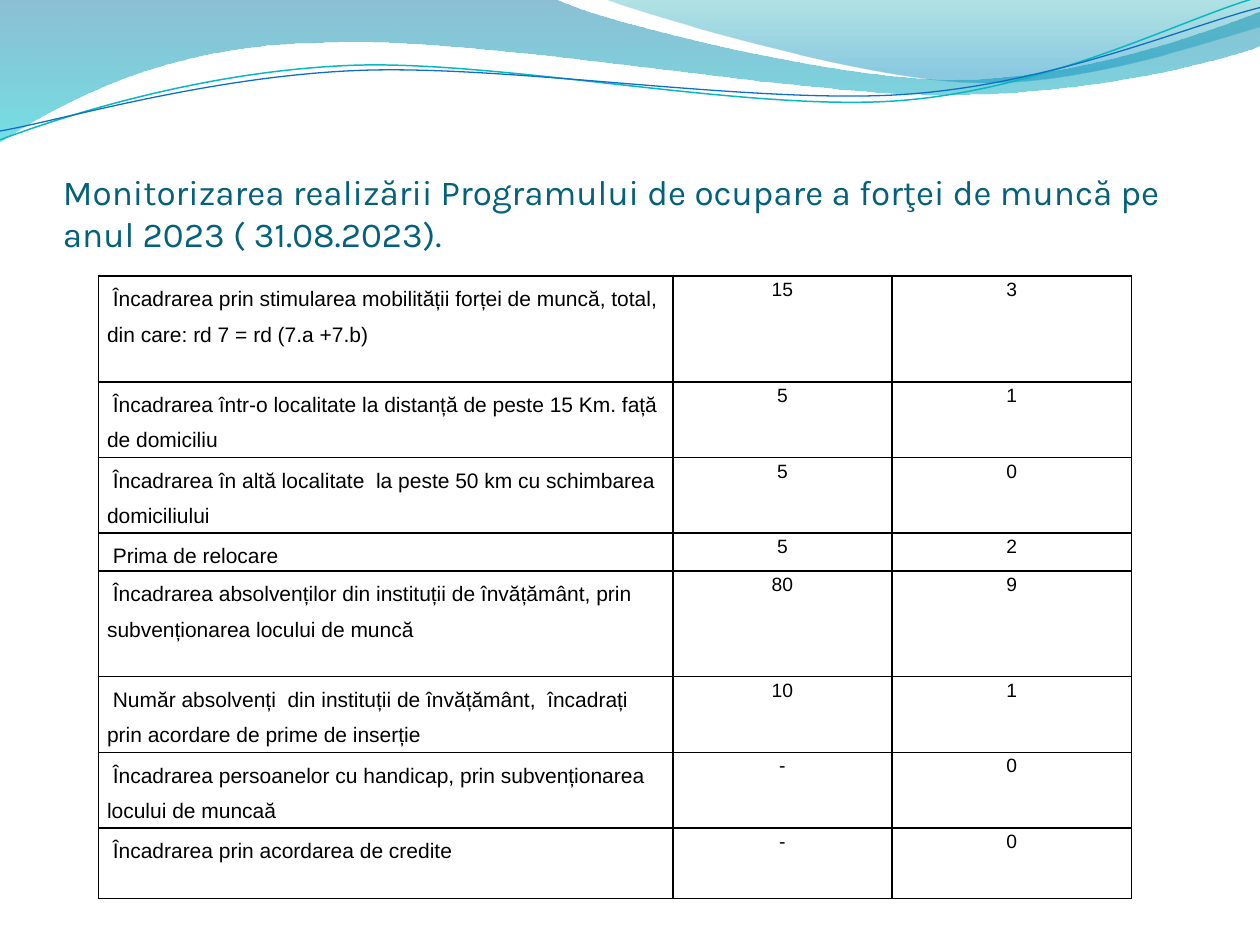
from dataclasses import dataclass

from lxml.etree import SubElement
from pptx import Presentation
from pptx.dml.color import RGBColor
from pptx.enum.text import MSO_ANCHOR, PP_ALIGN
from pptx.oxml.ns import qn
from pptx.util import Inches, Pt

TITLE_COLOR = RGBColor(0x04, 0x61, 0x7B)
BLACK = RGBColor(0, 0, 0)
TEAL = RGBColor(0x0A, 0xB8, 0xBF)
BLUE = RGBColor(0x0F, 0x6F, 0xC6)
DEEP_BLUE = RGBColor(0x00, 0x74, 0xA1)
CYAN = RGBColor(0x00, 0xC6, 0xCF)
DARK_TEAL = RGBColor(0x00, 0xA1, 0xA9)
SKY_BLUE = RGBColor(0x00, 0x8B, 0xBF)


@dataclass(frozen=True)
class Stop:
    position: float
    color: RGBColor
    opacity: int


@dataclass(frozen=True)
class Wave:
    """Each segment holds one point for a line, or three for a cubic curve."""
    start: tuple
    segments: tuple
    stops: tuple = ()
    line_color: RGBColor = BLACK
    line_width: float = 0


@dataclass(frozen=True)
class Measure:
    label: str
    planned: str
    achieved: str
    height: float


WAVES = (
    Wave((0, -0.01), (
        ((4.4, -0.01),),
        ((4.76, 0.17), (6.64, 0.63), (7.58, 0.63)),
        ((8.53, 0.63), (9.58, 0.26), (10, 0.09)),
        ((10.01, 0.36),),
        ((9.83, 0.44), (8.7, 0.76), (7.46, 0.75)),
        ((6.22, 0.75), (3.82, 0.28), (2.57, 0.34)),
        ((1.29, 0.35), (0.46, 0.83), (-0.01, 1.13)),
        ((0, -0.01),),
    ), stops=(Stop(0, DEEP_BLUE, 45), Stop(1, CYAN, 55))),
    Wave((4.79, -0.01), (
        ((5.09, 0.11), (6.82, 0.62), (7.69, 0.65)),
        ((8.56, 0.69), (9.61, 0.32), (10, 0.21)),
        ((10, 0),),
        ((4.79, -0.01),),
    ), stops=(Stop(0, DARK_TEAL, 30), Stop(0.8, SKY_BLUE, 45))),
    Wave((0, 1.11), (
        ((0.48, 0.93), (1.58, 0.57), (2.77, 0.52)),
        ((3.95, 0.47), (5.93, 0.89), (7.13, 0.8)),
        ((8.33, 0.71), (9.38, 0.15), (9.98, -0.02)),
    ), line_color=TEAL, line_width=0.85),
    Wave((0, 1.04), (
        ((0.47, 0.96), (1.64, 0.61), (2.83, 0.56)),
        ((4.03, 0.51), (5.97, 0.83), (7.17, 0.75)),
        ((8.36, 0.67), (9.41, 0.21), (10, 0.06)),
    ), line_color=BLUE, line_width=0.75),
)

TITLE = ("Monitorizarea realizării Programului de ocupare a forţei de muncă pe  "
         "anul 2023 ( 31.08.2023).")

COLUMN_WIDTHS = (4.56, 1.74, 1.9)
MEASURES = (
    Measure(" Încadrarea prin stimularea mobilității forței de muncă, total, "
            "din care: rd 7 = rd (7.a +7.b)", "15", "3", 0.84),
    Measure(" Încadrarea într-o localitate la distanță de peste 15 Km. față "
            "de domiciliu", "5", "1", 0.56),
    Measure(" Încadrarea în altă localitate  la peste 50 km cu schimbarea "
            "domiciliului", "5", "0", 0.56),
    Measure(" Prima de relocare", "5", "2", 0.28),
    Measure(" Încadrarea absolvenților din instituții de învățământ, prin "
            "subvenționarea locului de muncă", "80", "9", 0.84),
    Measure(" Număr absolvenți  din instituții de învățământ,  încadrați "
            "prin acordare de prime de inserție", "10", "1", 0.56),
    Measure(" Încadrarea persoanelor cu handicap, prin subvenționarea "
            "locului de muncaă", "-", "0", 0.56),
    Measure(" Încadrarea prin acordarea de credite", "-", "0", 0.56),
)


def bend_segments(shape, segments: tuple) -> None:
    """Turn each run of three straight steps into one cubic curve."""
    outline = next(shape._element.iter(qn("a:path")))
    steps = iter(outline.findall(qn("a:lnTo")))
    for segment in segments:
        lines = [next(steps) for _ in segment]
        if len(lines) == 1:
            continue
        curve = SubElement(outline, qn("a:cubicBezTo"))
        lines[0].addprevious(curve)
        for line in lines:
            curve.append(line[0])
            outline.remove(line)


def add_wave(slide, wave: Wave) -> None:
    points = [point for segment in wave.segments for point in segment]
    builder = slide.shapes.build_freeform(*map(Inches, wave.start))
    builder.add_line_segments([(Inches(x), Inches(y)) for x, y in points],
                              close=bool(wave.stops))
    shape = builder.convert_to_shape()
    bend_segments(shape, wave.segments)
    shape.shadow.inherit = False
    if not wave.stops:
        shape.fill.background()
        shape.line.color.rgb = wave.line_color
        shape.line.width = Pt(wave.line_width)
        return
    shape.line.fill.background()
    shape.fill.gradient()
    shape.fill.gradient_angle = 270
    for gradient_stop, stop in zip(shape.fill.gradient_stops, wave.stops):
        gradient_stop.position = stop.position
        gradient_stop.color.rgb = stop.color
    for color, stop in zip(shape._element.spPr.iter(qn("a:srgbClr")), wave.stops):
        SubElement(color, qn("a:alpha"), val=str(stop.opacity * 1000))


def add_run(paragraph, text: str, font: str, size: float, color: RGBColor) -> None:
    run = paragraph.add_run()
    run.text = text
    run.font.name = font
    run.font.size = Pt(size)
    run.font.color.rgb = color


def add_title(slide) -> None:
    box = slide.shapes.add_textbox(Inches(0.5), Inches(0.77), Inches(9), Inches(1.25))
    frame = box.text_frame
    frame.word_wrap = True
    frame.vertical_anchor = MSO_ANCHOR.BOTTOM
    frame.margin_left = frame.margin_right = frame.margin_bottom = 0
    frame.margin_top = Inches(0.05)
    add_run(frame.paragraphs[0], TITLE, "Karla", 20, TITLE_COLOR)


def add_borders(cell) -> None:
    properties = cell._tc.get_or_add_tcPr()
    for side in ("a:lnL", "a:lnR", "a:lnT", "a:lnB"):
        border = SubElement(properties, qn(side), w=str(Pt(1)))
        fill = SubElement(border, qn("a:solidFill"))
        SubElement(fill, qn("a:srgbClr"), val=str(BLACK))


def fill_cell(cell, text: str, is_label: bool) -> None:
    add_borders(cell)
    cell.fill.background()
    cell.margin_left = cell.margin_right = Inches(0.07)
    cell.margin_top = cell.margin_bottom = 0
    size = 12 if is_label else 11
    paragraph = cell.text_frame.paragraphs[0]
    paragraph.alignment = PP_ALIGN.LEFT if is_label else PP_ALIGN.CENTER
    paragraph.line_spacing = 1.5 if is_label else 1.15
    add_run(paragraph, text, "Arial", size, BLACK)
    # The end mark would otherwise keep 18 points and stretch the row.
    SubElement(paragraph._p, qn("a:endParaRPr"), sz=str(size * 100))


def add_measures_table(slide) -> None:
    height = sum(measure.height for measure in MEASURES)
    table = slide.shapes.add_table(
        len(MEASURES), len(COLUMN_WIDTHS), Inches(0.78), Inches(2.19),
        Inches(sum(COLUMN_WIDTHS)), Inches(height)).table
    table.first_row = table.horz_banding = False
    for column, width in zip(table.columns, COLUMN_WIDTHS):
        column.width = Inches(width)
    for row, measure in zip(table.rows, MEASURES):
        row.height = Inches(measure.height)
        texts = (measure.label, measure.planned, measure.achieved)
        for index, (cell, text) in enumerate(zip(row.cells, texts)):
            fill_cell(cell, text, is_label=index == 0)


def main() -> None:
    presentation = Presentation()
    presentation.slide_width = Inches(10)
    presentation.slide_height = Inches(7.5)
    slide = presentation.slides.add_slide(presentation.slide_layouts[6])
    for wave in WAVES:
        add_wave(slide, wave)
    add_title(slide)
    add_measures_table(slide)
    presentation.save("out.pptx")


if __name__ == "__main__":
    main()
